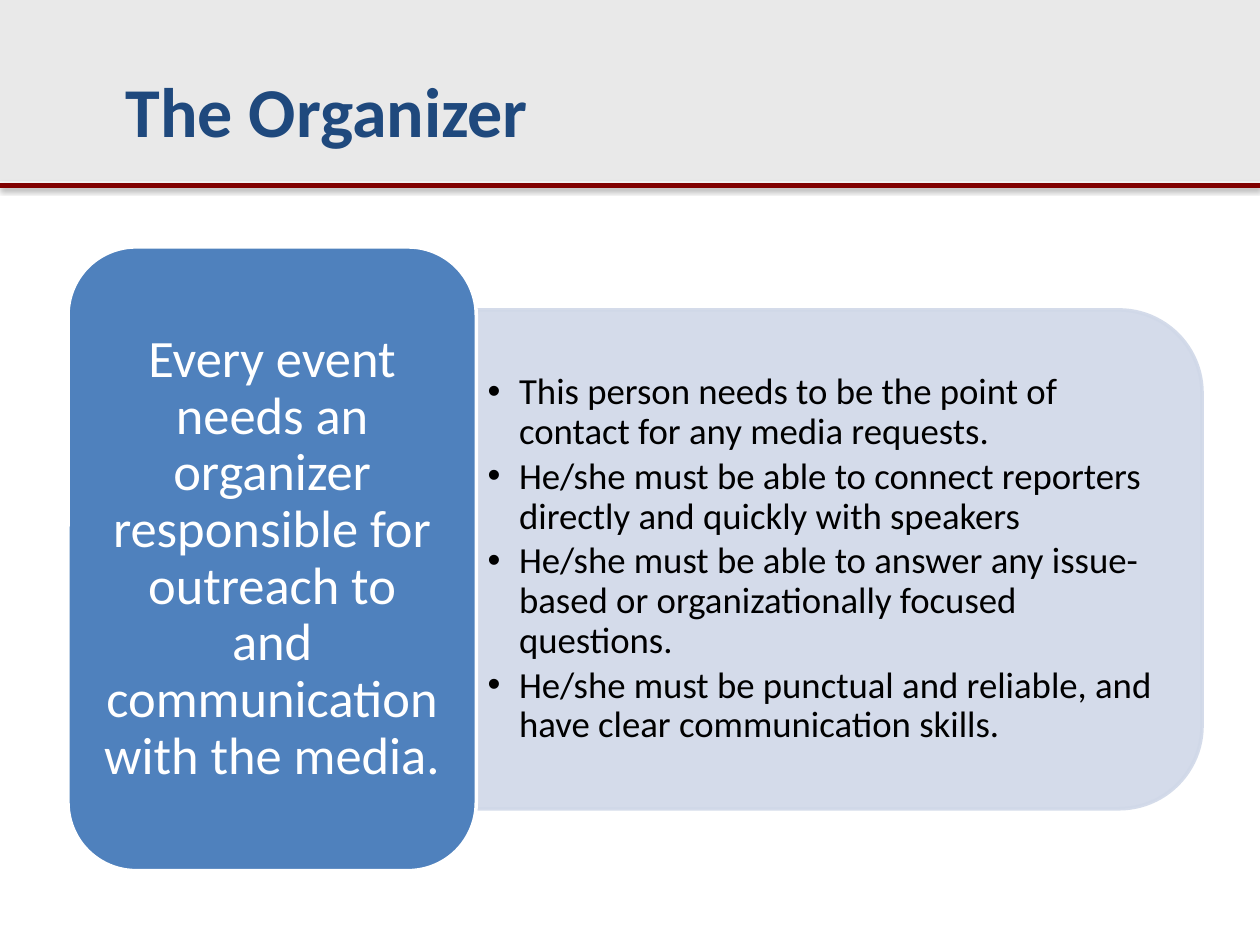
import pptx
import pptx.dml.color
import pptx.enum.shapes
import pptx.enum.text
import pptx.oxml
import pptx.oxml.ns
import pptx.util
from pptx.util import Inches

RGBColor = pptx.dml.color.RGBColor
SHAPE = pptx.enum.shapes.MSO_SHAPE
ALIGN = pptx.enum.text.PP_ALIGN
ANCHOR = pptx.enum.text.MSO_ANCHOR

GRAY = RGBColor(0xE9, 0xE9, 0xE9)
RED = RGBColor(0x80, 0x00, 0x00)
NAVY = RGBColor(0x1F, 0x49, 0x7D)
BLUE = RGBColor(0x4F, 0x81, 0xBD)
PALE = RGBColor(0xD0, 0xD8, 0xE8)
WHITE = RGBColor(0xFF, 0xFF, 0xFF)
BLACK = RGBColor(0x00, 0x00, 0x00)

TITLE = "The Organizer"
ROLE = ("Every event needs an organizer responsible for outreach to "
        "and communication with the media.")
DUTIES = [
    "This person needs to be the point of contact for any media requests.",
    "He/she must be able to connect reporters directly and quickly with speakers",
    "He/she must be able to answer any issue-based or organizationally focused questions.",
    "He/she must be punctual and reliable, and have clear communication skills.",
]


def apply(item, **values):
    for name, value in values.items():
        setattr(item, name, value)


def add_xml(parent, text):
    head, tail = text.split(">", 1)
    if head.endswith("/"):
        head, tail = head[:-1], "/>" + tail
    else:
        tail = ">" + tail
    space = pptx.oxml.ns.nsdecls("a")
    parent.append(pptx.oxml.parse_xml(f"{head} {space}{tail}"))


def add_block(slide, kind, box, fill, edge=None, alpha=None):
    """Draw a filled shape; alpha is its opacity in percent."""
    shape = slide.shapes.add_shape(kind, *map(Inches, box))
    shape.shadow.inherit = False
    shape.fill.solid()
    shape.fill.fore_color.rgb = fill
    if edge is None:
        shape.line.fill.background()
    else:
        shape.line.color.rgb = edge
        shape.line.width = pptx.util.Pt(2)
    if alpha:
        for color in shape.element.spPr.iter(pptx.oxml.ns.qn("a:srgbClr")):
            add_xml(color, f'<a:alpha val="{alpha * 1000}"/>')
    return shape


def add_text(slide, box, lines, color, size, pad=(0.1, 0.05), bold=False,
             bullet=False, anchor=ANCHOR.MIDDLE, **form):
    frame = slide.shapes.add_textbox(*map(Inches, box)).text_frame
    side, edge = map(Inches, pad)
    apply(frame, word_wrap=True, vertical_anchor=anchor, margin_left=side,
          margin_right=side, margin_top=edge, margin_bottom=edge)
    for index, line in enumerate(lines):
        para = frame.paragraphs[0] if index == 0 else frame.add_paragraph()
        para.text = line
        apply(para, **form)
        if bullet:
            props = para._p.get_or_add_pPr()
            props.set("marL", str(Inches(0.25)))
            props.set("indent", str(-Inches(0.25)))
            add_xml(props, '<a:buFont typeface="Arial"/>')
            add_xml(props, '<a:buChar char="•"/>')
        apply(para.font, name="Calibri", size=pptx.util.Pt(size), bold=bold)
        para.font.color.rgb = color


def add_header(slide, left, top, width, height):
    add_block(slide, SHAPE.RECTANGLE, (left, top, width, height), GRAY)
    y = Inches(top + height + 0.03)
    rule = slide.shapes.add_connector(
        pptx.enum.shapes.MSO_CONNECTOR.STRAIGHT,
        Inches(left), y, Inches(left + width), y)
    rule.line.color.rgb = RED
    rule.line.width = pptx.util.Pt(3)
    blur, drop = pptx.util.Pt(3.1), pptx.util.Pt(1.6)
    add_xml(rule.element.spPr,
            f'<a:effectLst><a:outerShdw blurRad="{blur}" dist="{drop}" dir="5400000">'
            '<a:srgbClr val="000000"><a:alpha val="38000"/></a:srgbClr>'
            '</a:outerShdw></a:effectLst>')


def add_duties(slide, left, top, width, height):
    # The shape is drawn upright, then turned so its round corners face right.
    turned = (left + (width - height) / 2, top + (height - width) / 2, height, width)
    panel = add_block(slide, SHAPE.ROUND_2_SAME_RECTANGLE, turned, PALE, PALE, 90)
    panel.rotation = 90
    gap = 0.19
    add_text(slide, (left, top + gap, width - gap, height - 2 * gap), DUTIES,
             BLACK, 21, pad=(0.09, 0.04), bullet=True, level=1,
             line_spacing=0.9, space_after=pptx.util.Pt(3))


def add_role(slide, left, top, width, height):
    add_block(slide, SHAPE.ROUNDED_RECTANGLE, (left, top, width, height), BLUE, WHITE)
    gap = 0.16
    add_text(slide, (left + gap, top + gap, width - 2 * gap, height - 2 * gap),
             [ROLE], WHITE, 30, pad=(0.12, 0.06),
             alignment=ALIGN.CENTER, line_spacing=0.9)


def main():
    deck = pptx.Presentation()
    apply(deck, slide_width=Inches(10), slide_height=Inches(7.5))
    slide = deck.slides.add_slide(deck.slide_layouts[6])
    add_header(slide, 0, 0, 10, 1.44)
    add_duties(slide, 3.78, 2.46, 5.76, 3.96)
    add_role(slide, 0.54, 1.96, 3.24, 4.95)
    add_text(slide, (0.9, 0.49, 5.04, 0.77), [TITLE], NAVY, 40,
             bold=True, anchor=ANCHOR.TOP)
    deck.save("out.pptx")


if __name__ == "__main__":
    main()
